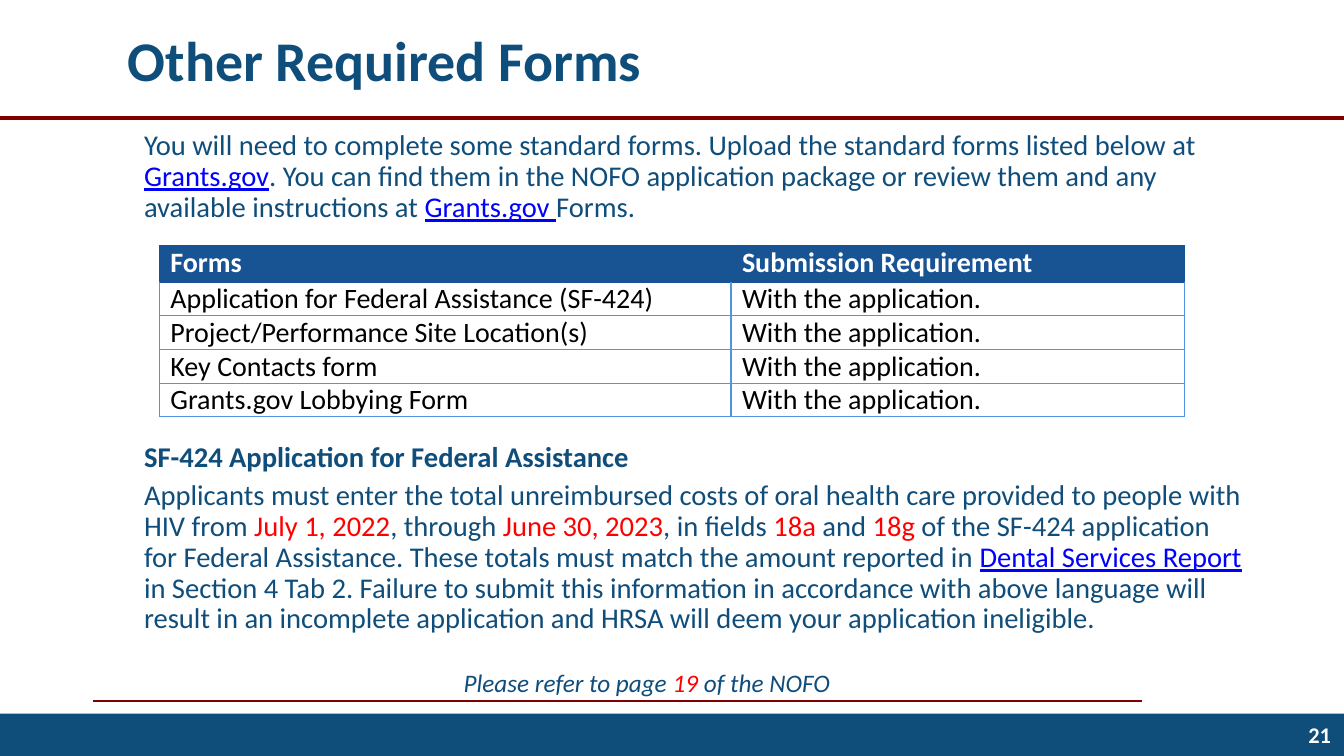
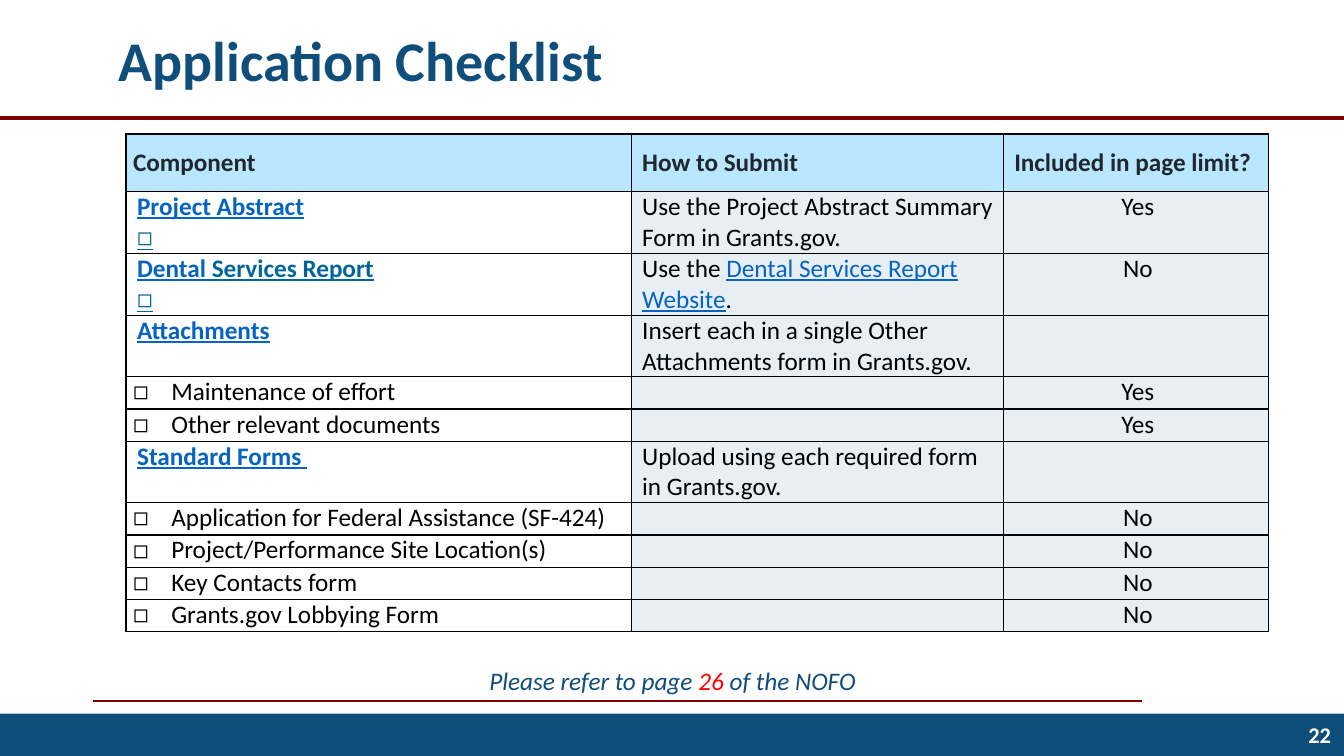
from lxml import etree
from pptx import Presentation
from pptx.dml.color import RGBColor
from pptx.enum import shapes, text
from pptx.oxml.ns import qn
from pptx.util import Inches, Pt

NAVY, MAROON, WHITE, BLACK = "0F4D7B", "800000", "FFFFFF", "000000"
HEADER_BLUE, GRID_BLUE = "185394", "5095E2"
SKY, PALE, INK = "B8E7FF", "E7EFF5", "21272D"
RED = {"color": "FF0000"}
LINK = {"color": "0000FF", "underline": True}
TABLE_LINK = {"color": "0563C1", "underline": True}
TEAL_LINK = {"color": "006699", "underline": True}
BOLD_LINK = {**TABLE_LINK, "bold": True}
BOX = "◻"
BOX_LINK = (BOX, {**TEAL_LINK, "name": "Arial"})
CENTER, RIGHT = text.PP_ALIGN.CENTER, text.PP_ALIGN.RIGHT
MIDDLE = text.MSO_ANCHOR.MIDDLE


def write(paragraph, *runs, **style):
    """Add runs, each a string or a (string, style changes) pair."""
    for item in runs:
        words, changes = (item, {}) if isinstance(item, str) else item
        look = {"name": "Calibri", **style, **changes}
        run = paragraph.add_run()
        run.text = words
        run.font.name = look["name"]
        run.font.size = Pt(look["size"])
        run.font.bold = look.get("bold", False)
        run.font.italic = look.get("italic", False)
        run.font.underline = look.get("underline", False)
        run.font.color.rgb = RGBColor.from_string(look["color"])


def style_cell(cell, fill, line, top_line=None):
    """Set margins, fill and 1 pt borders; top_line recolours the top one."""
    cell.margin_left, cell.margin_right = Inches(0.11), Inches(0.07)
    cell.margin_top = cell.margin_bottom = 0
    if fill:
        cell.fill.solid()
        cell.fill.fore_color.rgb = RGBColor.from_string(fill)
    else:
        cell.fill.background()
    properties = cell._tc.get_or_add_tcPr()
    for position, side in enumerate(("lnL", "lnR", "lnT", "lnB")):
        border = etree.Element(qn("a:" + side), w=str(Pt(1)))
        solid = etree.SubElement(border, qn("a:solidFill"))
        color = top_line if side == "lnT" and top_line else line
        etree.SubElement(solid, qn("a:srgbClr"), val=color)
        properties.insert(position, border)


presentation = Presentation()
presentation.slide_width = Inches(13.33)
presentation.slide_height = Inches(7.5)

# Title, rules, footer band, page number and page reference of every slide
frames = [
    # title, its left and width, slide number, page, note left, top and width
    ("Other Required Forms", 1.17, 11.25, "21", "19", 4.5, 6.57, 4.75, None),
    ("Application Checklist", 1.08, 11.33, "22", "26", 4.21, 6.55, 4.92, CENTER),
]
for (title, title_left, title_width, number, page,
     note_left, note_top, note_width, note_align) in frames:
    slide = presentation.slides.add_slide(presentation.slide_layouts[6])
    for left, right, y, weight in ((0.92, 11.33, 6.95, 1.5), (0, 13.33, 1.17, 3)):
        rule = slide.shapes.add_connector(
            shapes.MSO_CONNECTOR.STRAIGHT,
            Inches(left), Inches(y), Inches(right), Inches(y))
        rule.line.color.rgb = RGBColor.from_string(MAROON)
        rule.line.width = Pt(weight)
        etree.SubElement(rule._element.spPr, qn("a:effectLst"))
    band = slide.shapes.add_shape(
        shapes.MSO_SHAPE.RECTANGLE, 0, Inches(7.08), Inches(13.33), Inches(0.42))
    band.shadow.inherit = False
    band.fill.solid()
    band.fill.fore_color.rgb = RGBColor.from_string(NAVY)
    band.line.fill.background()

    texts = [
        ((title_left, 0, title_width, 1.17), MIDDLE, None, [title],
         {"size": 40, "color": NAVY, "bold": True}),
        ((12.41, 7.08, 0.89, 0.42), MIDDLE, RIGHT, [number],
         {"size": 16, "color": WHITE, "bold": True}),
        ((note_left, note_top, note_width, 0.4), text.MSO_ANCHOR.TOP, note_align,
         ["Please refer to page ", (page + " ", RED), "of the NOFO"],
         {"size": 18, "color": NAVY, "italic": True}),
    ]
    for place, anchor, align, runs, style in texts:
        frame = slide.shapes.add_textbox(*map(Inches, place)).text_frame
        frame.word_wrap = True
        frame.vertical_anchor = anchor
        frame.paragraphs[0].alignment = align
        write(frame.paragraphs[0], *runs, **style)

forms_slide, checklist_slide = presentation.slides

# Other Required Forms: text above and below the table
intro = [
    "You will need to complete some standard forms. Upload the standard forms "
    "listed below at ", ("Grants.gov", LINK),
    ". You can find them in the NOFO application package or review them and any "
    "available instructions at ", ("Grants.gov ", LINK), "Forms.",
]
heading = [("SF-424 Application for Federal Assistance", {"bold": True})]
requirement = [
    "Applicants must enter the total unreimbursed costs of oral health care "
    "provided to people with HIV from ", ("July 1, 2022", RED), ", through ",
    ("June 30, 2023", RED), ", in fields ", ("18a", RED), " and ", ("18g", RED),
    " of the SF-424 application for Federal Assistance. These totals must match "
    "the amount reported in ", ("Dental Services Report", LINK),
    " in Section 4 Tab 2. Failure to submit this information in accordance with "
    "above language will result in an incomplete application and HRSA will deem "
    "your application ineligible.",
]
for top, height, paragraphs in ((1.25, 1.05, [intro]),
                                (4.34, 2.25, [heading, requirement])):
    frame = forms_slide.shapes.add_textbox(
        Inches(1.33), Inches(top), Inches(11.09), Inches(height)).text_frame
    frame.word_wrap = True
    for index, runs in enumerate(paragraphs):
        paragraph = frame.add_paragraph() if index else frame.paragraphs[0]
        paragraph.line_spacing = 0.9
        paragraph.space_before = Pt(5.3 if index else 0)
        write(paragraph, *runs, size=20.4, color=NAVY)

# Other Required Forms: table
standard_forms = [
    "Application for Federal Assistance (SF-424)",
    "Project/Performance Site Location(s)",
    "Key Contacts form",
    "Grants.gov Lobbying Form",
]
form_rows = [("Forms", "Submission Requirement")]
form_rows += [(form, "With the application.") for form in standard_forms]
table = forms_slide.shapes.add_table(
    len(form_rows), 2, Inches(1.58), Inches(2.44), Inches(10.17), Inches(1.7)).table
table.horz_banding = False
for column, width in zip(table.columns, (5.67, 4.5)):
    column.width = Inches(width)
for row_index, row in enumerate(form_rows):
    header = row_index == 0
    table.rows[row_index].height = Inches(0.36 if header else 0.33)
    for column_index, words in enumerate(row):
        cell = table.cell(row_index, column_index)
        style_cell(cell, HEADER_BLUE if header else None,
                   HEADER_BLUE if header else GRID_BLUE,
                   HEADER_BLUE if row_index == 1 else None)
        if not header:
            cell.vertical_anchor = MIDDLE
        write(cell.text_frame.paragraphs[0], words, size=20, bold=header,
              color=WHITE if header else BLACK)

# Application Checklist: each cell is a list of paragraphs, each a list of runs
checklist = [
    ([["Component"]], [["How to Submit"]], [["Included in page limit?"]]),
    ([[("Project Abstract", BOLD_LINK)], [BOX_LINK]],
     [["Use the Project Abstract Summary Form in Grants.gov."]], [["Yes"]]),
    ([[("Dental", BOLD_LINK), (" Services Report", {**TEAL_LINK, "bold": True})],
      [BOX_LINK]],
     [["Use the ", ("Dental Services Report Website", TABLE_LINK), "."]], [["No"]]),
    ([[("Attachments", BOLD_LINK)]],
     [["Insert each in a single Other Attachments form in Grants.gov."]], []),
    ("Maintenance of effort", [], [["Yes"]]),
    ("Other relevant documents", [], [["Yes"]]),
    ([[("Standard Forms ", BOLD_LINK)]],
     [["Upload using each required form in Grants.gov."]], []),
]
checklist += [(form, [], [["No"]]) for form in standard_forms]
table = checklist_slide.shapes.add_table(
    len(checklist), 3, Inches(1.25), Inches(1.33), Inches(11.33), Inches(4.93)).table
table.horz_banding = False
for column, width in zip(table.columns, (5.01, 3.69, 2.63)):
    column.width = Inches(width)
for row_index, row in enumerate(checklist):
    header = row_index == 0
    checkbox = isinstance(row[0], str)
    height = 0.57 if header else 0.32 if checkbox else 0.61
    table.rows[row_index].height = Inches(height)
    for column_index, content in enumerate(row):
        cell = table.cell(row_index, column_index)
        style_cell(cell, SKY if header else PALE if column_index else None, BLACK)
        bulleted = checkbox and column_index == 0
        if header:
            cell.vertical_anchor = MIDDLE
        if column_index == 0 and (header or checkbox):
            cell.margin_left = Inches(0.07)
        for index, runs in enumerate([[content]] if bulleted else content):
            frame = cell.text_frame
            paragraph = frame.add_paragraph() if index else frame.paragraphs[0]
            paragraph.space_before = Pt(1 if index else 0)
            if bulleted:
                properties = paragraph._p.get_or_add_pPr()
                properties.set("marL", str(Inches(0.38)))
                properties.set("indent", str(Inches(-0.38)))
                etree.SubElement(properties, qn("a:buFont"), typeface="Arial")
                etree.SubElement(properties, qn("a:buChar"), char=BOX)
            if column_index == 2 and not header:
                paragraph.alignment = CENTER
            write(paragraph, *runs, size=18, bold=header,
                  color=INK if header else BLACK)

presentation.save("out.pptx")
